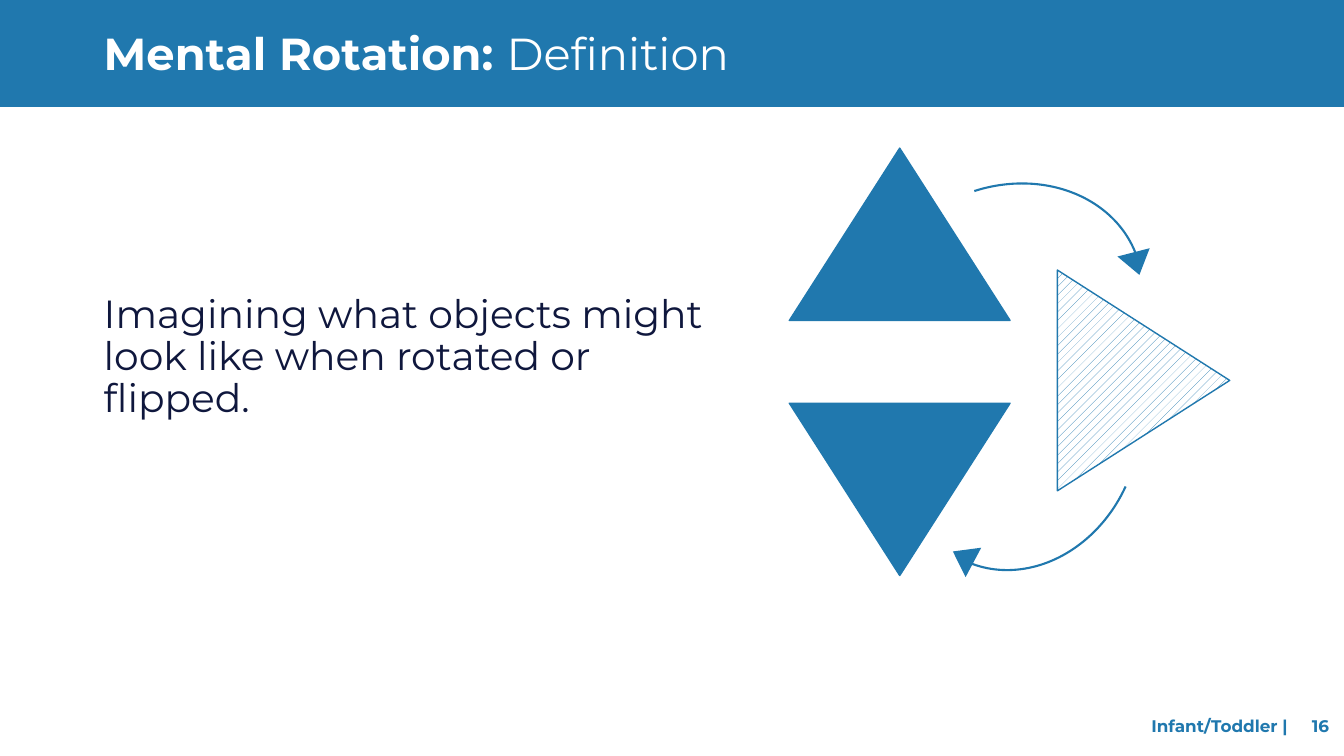
from pptx import Presentation
from pptx.dml.color import RGBColor
from pptx.enum import dml, shapes, text
from pptx.util import Pt
from lxml import etree

BLUE = RGBColor(0x20, 0x78, 0xAE)
NAVY = RGBColor(0x0F, 0x17, 0x3D)
WHITE = RGBColor(0xFF, 0xFF, 0xFF)
KIND = shapes.MSO_SHAPE
FOOTER_TABS = (229.5, 259)

presentation = Presentation()
presentation.slide_width, presentation.slide_height = Pt(960), Pt(540)
slide = presentation.slides.add_slide(presentation.slide_layouts[6])


def add_figure(kind, box, rotation=0, fill=None, line_width=None):
    shape = slide.shapes.add_shape(kind, *map(Pt, box))
    shape.shadow.inherit = False
    shape.rotation = rotation
    if fill is None:
        shape.fill.background()
    else:
        shape.fill.solid()
        shape.fill.fore_color.rgb = fill
    if line_width is None:
        shape.line.fill.background()
    else:
        shape.line.color.rgb = BLUE
        shape.line.width = Pt(line_width)
    return shape


def add_text(box, runs, size, color, line_spacing=1.0, tabs=()):
    """Add a middle-anchored text box; runs are (wording, bold) pairs, tabs right-aligned stops."""
    frame = slide.shapes.add_textbox(*map(Pt, box)).text_frame
    frame.word_wrap = True
    frame.vertical_anchor = text.MSO_ANCHOR.MIDDLE
    paragraph = frame.paragraphs[0]
    paragraph.line_spacing = line_spacing
    if tabs:
        properties = paragraph._p.get_or_add_pPr()
        namespace = "{%s}" % properties.nsmap["a"]
        tab_list = etree.SubElement(properties, namespace + "tabLst")
        for position in tabs:
            etree.SubElement(tab_list, namespace + "tab", pos=str(Pt(position)), algn="r")
    for wording, bold in runs:
        run = paragraph.add_run()
        run.text = wording
        format_values = {"name": "Montserrat", "size": Pt(size), "bold": bold}
        for attribute, value in format_values.items():
            setattr(run.font, attribute, value)
        run.font.color.rgb = color


# Header, definition and footer
add_figure(KIND.RECTANGLE, (0, 0, 960, 76.3), fill=BLUE)
add_text((67, 18.7, 853, 42.5), [("Mental Rotation: ", True), ("Definition", False)], 32, WHITE, 0.9)
add_text((67, 98.6, 454.3, 314),
         [("Imagining what objects might look like when rotated or flipped.", False)], 28, NAVY, 0.9)
add_text((683.3, 504, 274.3, 28.8), [("\tInfant/Toddler |\t16", True)], 12, BLUE, tabs=FOOTER_TABS)

# Triangle in three positions; the hatched one is the turn in between
for left, top, rotation in ((563.8, 105.8, 0), (563.8, 288, 180), (738, 210.2, 90)):
    triangle = add_figure(KIND.ISOSCELES_TRIANGLE, (left, top, 157.7, 123.1), rotation, BLUE, 1)
triangle.fill.patterned()
triangle.fill.pattern = dml.MSO_PATTERN.PERCENT_20
triangle.fill.fore_color.rgb = BLUE
triangle.fill.back_color.rgb = WHITE

# Curved arrows: an arc and a triangular head each
curved_arrows = (
    ((625, 132.5), 342.1, (799.9, 180), 165.5),
    ((633.6, 231.8), 114.6, (676.1, 389.5), 298),
)
for arc_corner, arc_rotation, head_corner, head_rotation in curved_arrows:
    add_figure(KIND.ARC, (*arc_corner, 192.2, 163.4), arc_rotation, line_width=1.5)
    add_figure(KIND.ISOSCELES_TRIANGLE, (*head_corner, 23.8, 16.6), head_rotation, BLUE)

presentation.save("out.pptx")
